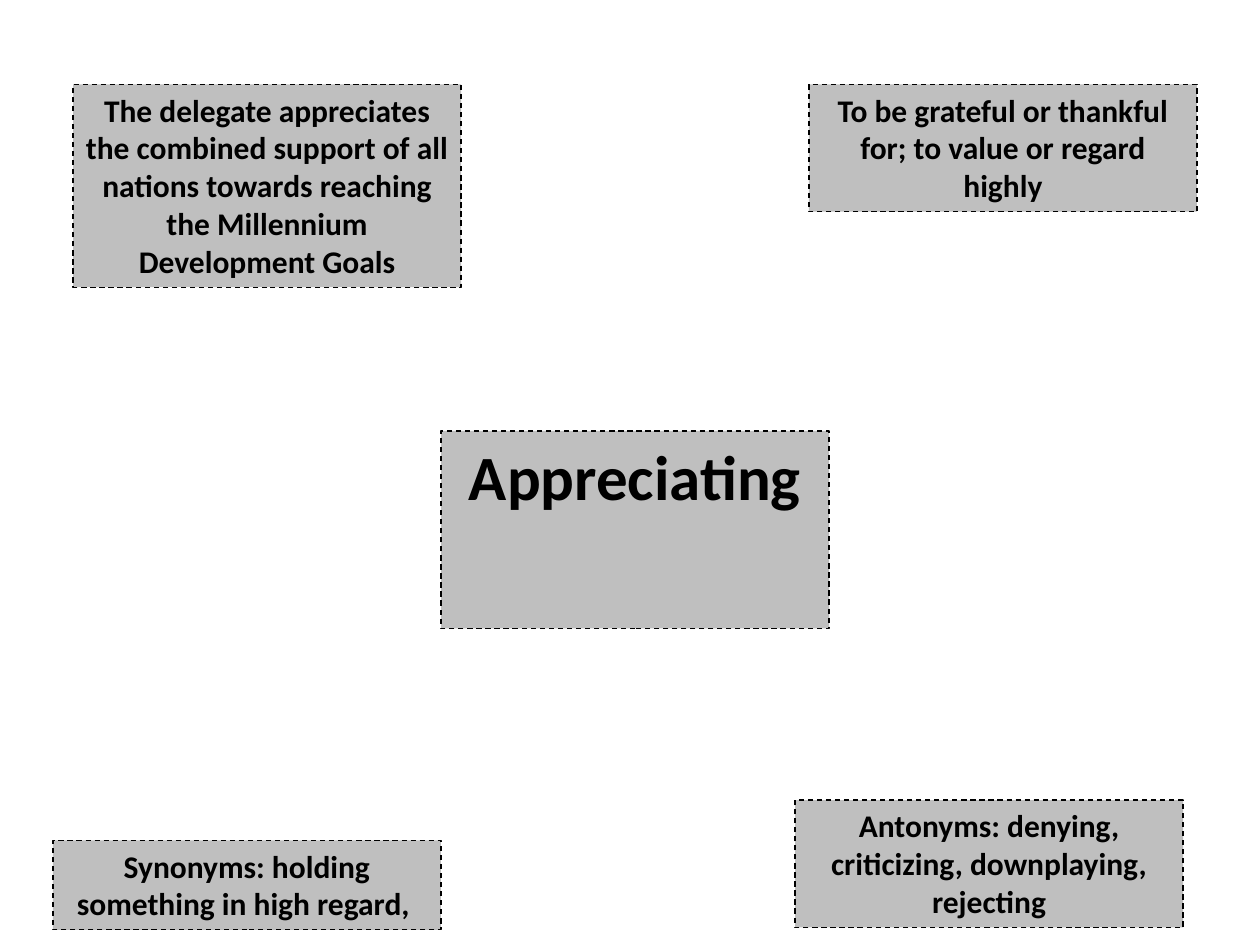
from dataclasses import dataclass

from pptx import Presentation
from pptx.dml.color import RGBColor
from pptx.enum.dml import MSO_LINE_DASH_STYLE as Dash
from pptx.enum.text import MSO_ANCHOR as Anchor, MSO_AUTO_SIZE as AutoSize, PP_ALIGN as Align
from pptx.util import Inches, Pt


@dataclass(frozen=True)
class Theme:
    font: str = "Calibri"
    ink: RGBColor = RGBColor(0x00, 0x00, 0x00)
    panel: RGBColor = RGBColor(0xBF, 0xBF, 0xBF)
    word_size: int = 36
    note_size: int = 18
    border: float = 0.75


THEME = Theme()
SLIDE_WIDTH, SLIDE_HEIGHT = 10, 7.5
CARD_WIDTH = 3.08
LINE_HEIGHT = 0.3  # one line of note text
CARD_PADDING = 0.11  # top and bottom insets together

# text, left, top, height in note lines
WORD = ("Appreciating", 3.5, 3.42, 2)
NOTES = [
    ("Antonyms: denying, criticizing, downplaying, rejecting", 6.31, 6.35, 3),
    ("Synonyms: holding something in high regard, ", 0.42, 6.67, 2),
    ("To be grateful or thankful for; to value or regard highly", 6.42, 0.67, 3),
    ("The delegate appreciates the combined support of all nations "
     "towards reaching the Millennium Development Goals", 0.58, 0.67, 5),
]


def format_card(box, card, size):
    """Place a box on the slide and give it the dashed grey card look."""
    text, left, top, lines = card
    box.left, box.top = Inches(left), Inches(top)
    box.width = Inches(CARD_WIDTH)
    box.height = Inches(lines * LINE_HEIGHT + CARD_PADDING)
    box.fill.solid()
    box.fill.fore_color.rgb = THEME.panel
    box.line.color.rgb = THEME.ink
    box.line.width = Pt(THEME.border)
    box.line.dash_style = Dash.DASH

    frame = box.text_frame
    frame.text = text
    frame.word_wrap = True
    frame.auto_size = AutoSize.SHAPE_TO_FIT_TEXT
    frame.vertical_anchor = Anchor.TOP
    paragraph = frame.paragraphs[0]
    paragraph.alignment = Align.CENTER
    font = paragraph.font
    font.name, font.size, font.bold = THEME.font, Pt(size), True
    font.color.rgb = THEME.ink


def main():
    deck = Presentation()
    deck.slide_width, deck.slide_height = Inches(SLIDE_WIDTH), Inches(SLIDE_HEIGHT)
    page = deck.slides.add_slide(deck.slide_layouts.get_by_name("Title Only"))
    format_card(page.shapes.title, WORD, THEME.word_size)
    for note in NOTES:
        format_card(page.shapes.add_textbox(0, 0, 0, 0), note, THEME.note_size)
    deck.save("out.pptx")


if __name__ == "__main__":
    main()
